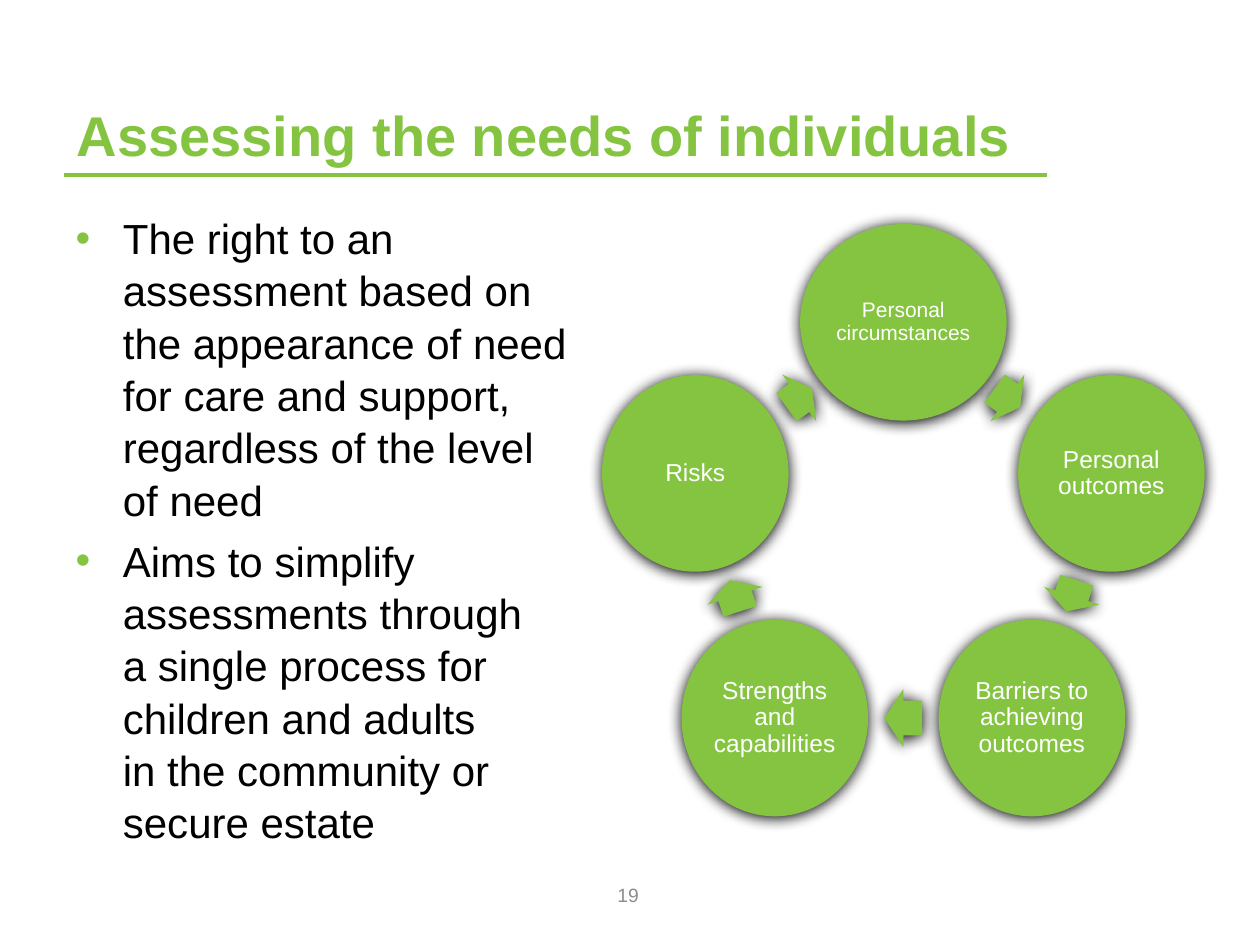
"""Build the slide on assessing the needs of individuals."""
import math

from lxml import etree
from pptx import Presentation
from pptx.dml.color import RGBColor
from pptx.enum import shapes, text
from pptx.oxml import ns
from pptx.util import Pt

TITLE = "Assessing the needs of individuals"
BULLETS = [
    "The right to an assessment based on\vthe appearance of need for care "
    "and support, regardless of the level\vof need",
    "Aims to simplify assessments through\va single process for children "
    "and adults\vin the community or secure estate",
]
CYCLE = [
    ("Personal circumstances", 118, 12, 18),
    ("Personal outcomes", 106.6, 14, 18.7),
    ("Barriers to achieving outcomes", 106.6, 14, 21.6),
    ("Strengths and capabilities", 106.6, 14, 18.7),
    ("Risks", 106.6, 14, 18),
]
PAGE = "19"

FONT = "Arial"
GREEN = RGBColor(0x85, 0xC4, 0x41)
BLACK = RGBColor(0, 0, 0)
WHITE = RGBColor(0xFF, 0xFF, 0xFF)
GREY = RGBColor(0x8C, 0x8C, 0x8C)

CENTER_X, CENTER_Y, RADIUS = 516.2, 309.2, 125
CIRCLE_H, ARROW_H = 112.3, 33.1


def add(parent, tag, **attrs):
    return etree.SubElement(parent, ns.qn(tag), attrs)


def place(sp, left, top, width, height):
    sp.left, sp.top, sp.width, sp.height = map(Pt, (left, top, width, height))


def style(p, size, color, align, bold=False):
    p.alignment = align
    p.font.name, p.font.size, p.font.bold = FONT, Pt(size), bold
    p.font.color.rgb = color


def setup(tf, anchor):
    tf.word_wrap = True
    tf.auto_size = text.MSO_AUTO_SIZE.NONE
    tf.vertical_anchor = anchor


def add_node(s, kind, radius, angle, width, height):
    a = math.radians(angle)
    x = CENTER_X + radius * math.sin(a) - width / 2
    y = CENTER_Y - radius * math.cos(a) - height / 2
    sp = s.shapes.add_shape(kind, *map(Pt, (x, y, width, height)))
    sp.fill.solid()
    sp.fill.fore_color.rgb = GREEN
    sp.line.fill.background()
    sp.shadow.inherit = False
    effects = sp._element.spPr.find(ns.qn("a:effectLst"))
    shadow = add(effects, "a:outerShdw", blurRad=str(Pt(8.5)), dist=str(Pt(1)),
                 dir="5400000", rotWithShape="0")
    add(shadow, "a:srgbClr", val=str(BLACK))
    return sp


def add_heading(s):
    line = s.shapes.add_connector(shapes.MSO_CONNECTOR.STRAIGHT,
                                  Pt(36.7), Pt(100), Pt(598.3), Pt(100))
    line.line.color.rgb, line.line.width = GREEN, Pt(2)
    add(line._element.spPr, "a:effectLst")
    sp = s.shapes.title
    place(sp, 36.7, 20.9, 561.6, 78.5)
    setup(sp.text_frame, text.MSO_ANCHOR.BOTTOM)
    sp.text_frame.text = TITLE
    style(sp.text_frame.paragraphs[0], 32, GREEN, text.PP_ALIGN.LEFT, True)


def add_bullets(s):
    sp = s.placeholders[1]
    place(sp, 36, 116.6, 318.2, 356.4)
    tf = sp.text_frame
    setup(tf, text.MSO_ANCHOR.TOP)
    for i, words in enumerate(BULLETS):
        p = tf.add_paragraph() if i else tf.paragraphs[0]
        p.text = words
        pPr = p._p.get_or_add_pPr()
        pPr.set("marL", str(Pt(27)))
        pPr.set("indent", str(Pt(-27)))
        add(add(pPr, "a:buClr"), "a:srgbClr", val=str(GREEN))
        add(pPr, "a:buFont", typeface=FONT)
        add(pPr, "a:buChar", char="•")
        p.space_before = Pt(4.8 if i else 0)
        p.line_spacing = 1.04
        style(p, 24, BLACK, text.PP_ALIGN.LEFT)


def add_cycle(s):
    step = 360 / len(CYCLE)
    for i, (label, width, size, arrow_w) in enumerate(CYCLE):
        sp = add_node(s, shapes.MSO_SHAPE.OVAL, RADIUS, i * step, width, CIRCLE_H)
        tf = sp.text_frame
        setup(tf, text.MSO_ANCHOR.MIDDLE)
        tf.margin_left = tf.margin_right = tf.margin_top = tf.margin_bottom = Pt(1.4)
        tf.text = label
        p = tf.paragraphs[0]
        p.line_spacing = 0.9
        style(p, size, WHITE, text.PP_ALIGN.CENTER)

        angle = (i + 0.5) * step
        arrow = add_node(s, shapes.MSO_SHAPE.RIGHT_ARROW,
                         RADIUS * math.cos(math.radians(step / 2)), angle,
                         arrow_w, ARROW_H)
        arrow.adjustments[0], arrow.adjustments[1] = 0.6, 0.5
        arrow.rotation = angle


def add_page_number(s):
    tf = s.shapes.add_textbox(*map(Pt, (275, 496.8, 168, 28.8))).text_frame
    setup(tf, text.MSO_ANCHOR.MIDDLE)
    tf.text = PAGE
    style(tf.paragraphs[0], 11, GREY, text.PP_ALIGN.CENTER)


def main():
    prs = Presentation()
    prs.slide_width, prs.slide_height = Pt(720), Pt(540)
    s = prs.slides.add_slide(prs.slide_layouts[1])
    add_heading(s)
    add_bullets(s)
    add_cycle(s)
    add_page_number(s)
    prs.save("out.pptx")


if __name__ == "__main__":
    main()
